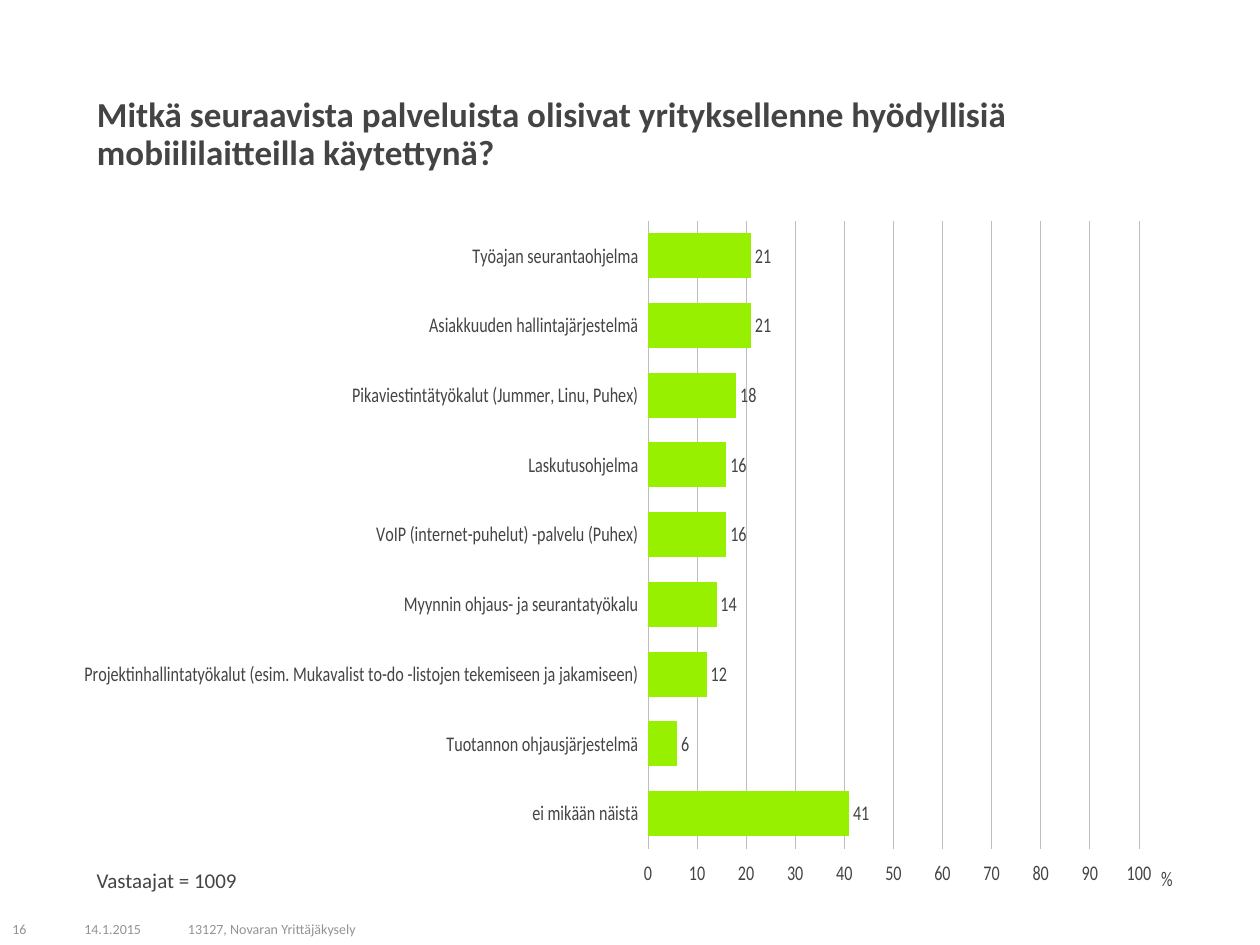
import pptx
import pptx.chart.data
import pptx.dml.color
import pptx.enum.chart
import pptx.enum.text
import pptx.oxml
import pptx.oxml.ns
import pptx.util

Cm = pptx.util.Cm
Pt = pptx.util.Pt
RGBColor = pptx.dml.color.RGBColor
Anchor = pptx.enum.text.MSO_ANCHOR
LabelSide = pptx.enum.chart.XL_TICK_LABEL_POSITION

DARK = RGBColor(0x44, 0x44, 0x44)
CHART_TEXT = RGBColor(0x3F, 0x3F, 0x3F)
FOOTER_GREY = RGBColor(0x93, 0x93, 0x93)
GRID_GREY = RGBColor(0xBC, 0xBE, 0xC0)
GREEN = RGBColor(0x96, 0xF0, 0x00)

SERVICES = {
    "Työajan seurantaohjelma": 21,
    "Asiakkuuden hallintajärjestelmä": 21,
    "Pikaviestintätyökalut (Jummer, Linu, Puhex)": 18,
    "Laskutusohjelma": 16,
    "VoIP (internet-puhelut) -palvelu (Puhex)": 16,
    "Myynnin ohjaus- ja seurantatyökalu": 14,
    "Projektinhallintatyökalut (esim. Mukavalist to-do -listojen "
    "tekemiseen ja jakamiseen)": 12,
    "Tuotannon ohjausjärjestelmä": 6,
    "ei mikään näistä": 41,
}


def set_layout(element, index, **fractions):
    """Place a chart part by fractions of the chart's size."""
    for old in element.findall(pptx.oxml.ns.qn("c:layout")):
        element.remove(old)
    target = '<c:layoutTarget val="inner"/>' if "w" in fractions else ""
    values = "".join(f'<c:{key} val="{value}"/>' for key, value in fractions.items())
    element.insert(index, pptx.oxml.parse_xml(
        f'<c:layout {pptx.oxml.ns.nsdecls("c")}><c:manualLayout>{target}'
        f'<c:xMode val="edge"/><c:yMode val="edge"/>{values}'
        "</c:manualLayout></c:layout>"))


class SurveyPage:
    font_name = "Calibri"

    def __init__(self, deck):
        self.page = deck.slides.add_slide(deck.slide_layouts[5])

    def style(self, font, size, color, bold=False):
        font.name = self.font_name
        font.size = Pt(size)
        font.bold = bold
        font.color.rgb = color

    def fill_box(self, box, text, size, color, anchor, bold=False):
        frame = box.text_frame
        frame.text = text
        frame.word_wrap = True
        frame.auto_size = pptx.enum.text.MSO_AUTO_SIZE.NONE
        frame.vertical_anchor = anchor
        para = frame.paragraphs[0]
        para.alignment = pptx.enum.text.PP_ALIGN.LEFT
        para.line_spacing = 0.9
        self.style(para.font, size, color, bold)

    def title(self, text, left, top, width, height):
        box = self.page.shapes.title
        box.left, box.top, box.width, box.height = left, top, width, height
        self.fill_box(box, text, 20, DARK, Anchor.TOP, bold=True)

    def text(self, text, left, top, width, height, size=12, color=DARK,
             anchor=Anchor.TOP):
        box = self.page.shapes.add_textbox(left, top, width, height)
        self.fill_box(box, text, size, color, anchor)

    def footer(self, text, left, width):
        self.text(text, left, Cm(18.43), width, Cm(0.63), 8, FOOTER_GREY,
                  Anchor.MIDDLE)

    def bar_chart(self, values, left, top, width, height):
        data = pptx.chart.data.CategoryChartData()
        data.categories = list(values)
        data.add_series("Series 1", list(values.values()))
        chart = self.page.shapes.add_chart(
            pptx.enum.chart.XL_CHART_TYPE.BAR_CLUSTERED,
            left, top, width, height, data).chart
        chart.has_legend = False
        chart.has_title = False
        self.style(chart.font, 12, CHART_TEXT)
        set_layout(chart.plots[0]._element.getparent(), 0,
                   x=0.371, y=0.012, w=0.586, h=0.92)
        self.bars(chart.plots[0])
        self.axes(chart)

    def bars(self, plot):
        plot.gap_width = 55
        plot.vary_by_categories = False
        fill = plot.series[0].format.fill
        fill.solid()
        fill.fore_color.rgb = GREEN
        plot.has_data_labels = True
        labels = plot.data_labels
        labels.show_value = True
        labels.position = pptx.enum.chart.XL_LABEL_POSITION.OUTSIDE_END
        labels.number_format = "#,##0"
        labels.number_format_is_linked = False
        self.style(labels.font, 12, DARK)

    def axes(self, chart):
        for axis in (chart.category_axis, chart.value_axis):
            axis.major_tick_mark = pptx.enum.chart.XL_TICK_MARK.NONE
            axis.minor_tick_mark = pptx.enum.chart.XL_TICK_MARK.NONE
            axis.format.line.fill.background()
            self.style(axis.tick_labels.font, 12, DARK)
        categories, percent = chart.category_axis, chart.value_axis
        categories.tick_label_position = LabelSide.LOW
        categories.reverse_order = True
        percent.tick_label_position = LabelSide.HIGH
        percent.minimum_scale, percent.maximum_scale = 0, 100
        percent.major_unit = 10
        percent.tick_labels.number_format = "General"
        percent.tick_labels.number_format_is_linked = False
        percent.has_major_gridlines = True
        grid_line = percent.major_gridlines.format.line
        grid_line.color.rgb = GRID_GREY
        grid_line.width = Pt(0.5)
        title = percent.axis_title
        title.text_frame.text = "%"
        self.style(title.text_frame.paragraphs[0].font, 12, DARK)
        set_layout(title._element, 1, x=0.98, y=0.95)


def main():
    deck = pptx.Presentation()
    deck.slide_width, deck.slide_height = Cm(25.4), Cm(19.05)
    survey = SurveyPage(deck)
    left, width = Cm(1.7), Cm(22)
    survey.footer("14.1.2015", Cm(1.45), Cm(2.08))
    survey.footer("13127, Novaran Yrittäjäkysely", Cm(3.54), Cm(8.41))
    survey.footer("16", Cm(0), Cm(1.14))
    survey.bar_chart(SERVICES, left, Cm(4.29), width, Cm(13.82))
    survey.title("Mitkä seuraavista palveluista olisivat yrityksellenne hyödyllisiä "
                 "mobiililaitteilla käytettynä?", left, Cm(1.83), width, Cm(1.6))
    survey.text("Vastaajat = 1009", left, Cm(17.42), Cm(7.04), Cm(0.71))
    deck.save("out.pptx")


if __name__ == "__main__":
    main()
